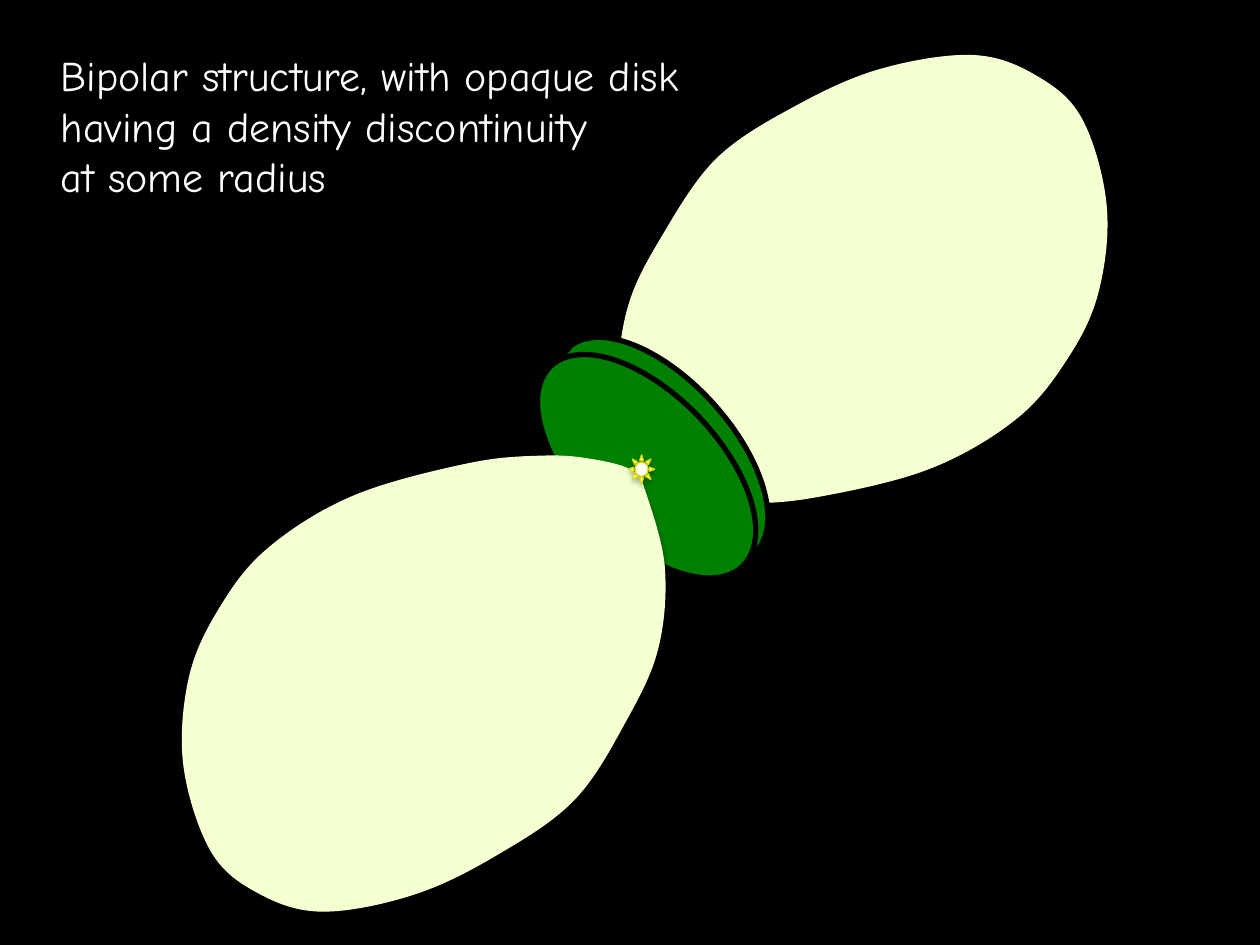
import math

from lxml import etree
from pptx import Presentation
from pptx import util as u
from pptx.dml.color import RGBColor
from pptx.enum import shapes, text
from pptx.oxml.ns import qn

BLACK = RGBColor(0, 0, 0)
WHITE = RGBColor(255, 255, 255)
CREAM = RGBColor(0xF4, 0xFF, 0xD2)
GREEN = RGBColor(0, 0x80, 0)
YELLOW = RGBColor(0xDD, 0xDE, 0x03)

# Lower lobe: points that a smooth closed curve runs through, and its centre
LOBE_UNIT = u.Cm(2.54)
LOBE_CENTER = (3.38, 5.42)
LOBE_TILT = 354.1
LOBE_POINTS = [
    (5.02, 3.74), (4.71, 3.65), (4.32, 3.62), (3.72, 3.68), (2.8, 3.94),
    (2.12, 4.36), (1.73, 4.85), (1.5, 5.39), (1.46, 6.08), (1.68, 6.76),
    (2.06, 7.09), (2.56, 7.23), (3.27, 7.1), (3.91, 6.8), (4.55, 6.35),
    (4.97, 5.71), (5.22, 5.14), (5.27, 4.5), (5.12, 3.91),
]


def upright_lobe():
    """Turn the lobe back to level, about its centre, in EMU."""
    angle = math.radians(-LOBE_TILT)
    cos, sin = math.cos(angle) * LOBE_UNIT, math.sin(angle) * LOBE_UNIT
    center_x, center_y = LOBE_CENTER
    return [(round((x - center_x) * cos - (y - center_y) * sin),
             round((x - center_x) * sin + (y - center_y) * cos))
            for x, y in LOBE_POINTS]


def smooth_outline(shape):
    """Replace the straight sides of a closed freeform by Catmull-Rom curves."""
    element = shape._element
    points = [(int(point.get("x")), int(point.get("y")))
              for point in element.iter(qn("a:pt"))][:-1]
    count = len(points)
    for i, side in enumerate(list(element.iter(qn("a:lnTo")))):
        before, start, end, after = (points[(i + k) % count]
                                     for k in (-1, 0, 1, 2))
        handle_out = [s + (e - b) / 6 for b, s, e in zip(before, start, end)]
        handle_in = [e - (a - s) / 6 for s, e, a in zip(start, end, after)]
        curve = etree.Element(qn("a:cubicBezTo"))
        for x, y in (handle_out, handle_in, end):
            etree.SubElement(curve, qn("a:pt"), x=str(round(x)), y=str(round(y)))
        side.getparent().replace(side, curve)


class SlideBuilder:
    font = "Comic Neue"
    size = u.Pt(24)

    def __init__(self, slide):
        self.slide = slide
        slide.background.fill.solid()
        slide.background.fill.fore_color.rgb = BLACK

    def style(self, shape, fill, line, width):
        shape.shadow.inherit = False
        shape.fill.solid()
        shape.fill.fore_color.rgb = fill
        shape.line.color.rgb = line
        shape.line.width = u.Pt(width)

    def add_shadow(self, shape):
        effects = shape._element.spPr.find(qn("a:effectLst"))
        shadow = etree.SubElement(
            effects, qn("a:outerShdw"), blurRad=str(u.Pt(3.1)),
            dist=str(u.Pt(1.8)), dir="5400000", rotWithShape="0")
        color = etree.SubElement(shadow, qn("a:srgbClr"), val=str(BLACK))
        etree.SubElement(color, qn("a:alpha"), val="35000")

    def title(self, lines, left, top, width, height):
        title = self.slide.shapes.title
        title.left, title.top = u.Cm(left), u.Cm(top)
        title.width, title.height = u.Cm(width), u.Cm(height)
        frame = title.text_frame
        frame.text = "\n".join(lines)
        frame.word_wrap = True
        frame.auto_size = text.MSO_AUTO_SIZE.NONE
        frame.vertical_anchor = text.MSO_ANCHOR.TOP
        for paragraph in frame.paragraphs:
            paragraph.alignment = text.PP_ALIGN.LEFT
            for run in paragraph.runs:
                run.font.name, run.font.size = self.font, self.size
                run.font.color.rgb = WHITE

    def preset(self, kind, box, fill, line, width, rotation=0):
        shape = self.slide.shapes.add_shape(kind, *map(u.Cm, box))
        self.style(shape, fill, line, width)
        shape.rotation = rotation
        return shape

    def disk(self, box, rotation):
        self.preset(shapes.MSO_SHAPE.OVAL, box, GREEN, BLACK, 3, rotation)

    def star(self, box):
        star = self.preset(shapes.MSO_SHAPE.SUN, box, WHITE, YELLOW, 0.75)
        self.add_shadow(star)

    def edge(self, start, end, width):
        line = self.slide.shapes.add_connector(
            shapes.MSO_CONNECTOR.STRAIGHT, *map(u.Cm, start + end))
        line.line.color.rgb = BLACK
        line.line.width = u.Pt(width)
        etree.SubElement(line._element.spPr, qn("a:effectLst"))

    def lobe(self, center_x, center_y, rotation):
        outline = upright_lobe()
        builder = self.slide.shapes.build_freeform(*outline[0])
        builder.add_line_segments(outline[1:] + outline[:1], close=True)
        shape = builder.convert_to_shape(u.Cm(center_x), u.Cm(center_y))
        smooth_outline(shape)
        shape.rotation = rotation
        self.style(shape, CREAM, CREAM, 0.75)
        self.add_shadow(shape)


def main():
    presentation = Presentation()
    presentation.slide_width = u.Cm(25.4)
    presentation.slide_height = u.Cm(19.05)
    slide = presentation.slides.add_slide(presentation.slide_layouts[5])
    builder = SlideBuilder(slide)

    builder.title(["Bipolar structure, with opaque disk",
                   "having a density discontinuity",
                   "at some radius"], 0.97, 0.88, 14.05, 3.33)

    # Far lobe
    builder.edge((11.51, 7.01), (11.1, 7.39), 2)
    builder.lobe(17.37, 5.59, 176.1)

    # Disk: back face, rim edges, front face
    builder.disk((10.54, 7.67, 5.59, 2.82), 47.9)
    builder.edge((14.81, 11.43), (15.19, 11.05), 3)
    builder.edge((11.1, 7.37), (11.48, 7.01), 3)
    builder.disk((10.24, 7.95, 5.59, 2.9), 46.2)

    # Near lobe and central star
    builder.lobe(8.59, 13.77, LOBE_TILT)
    builder.star((12.67, 9.17, 0.53, 0.58))

    presentation.save("out.pptx")


if __name__ == "__main__":
    main()
